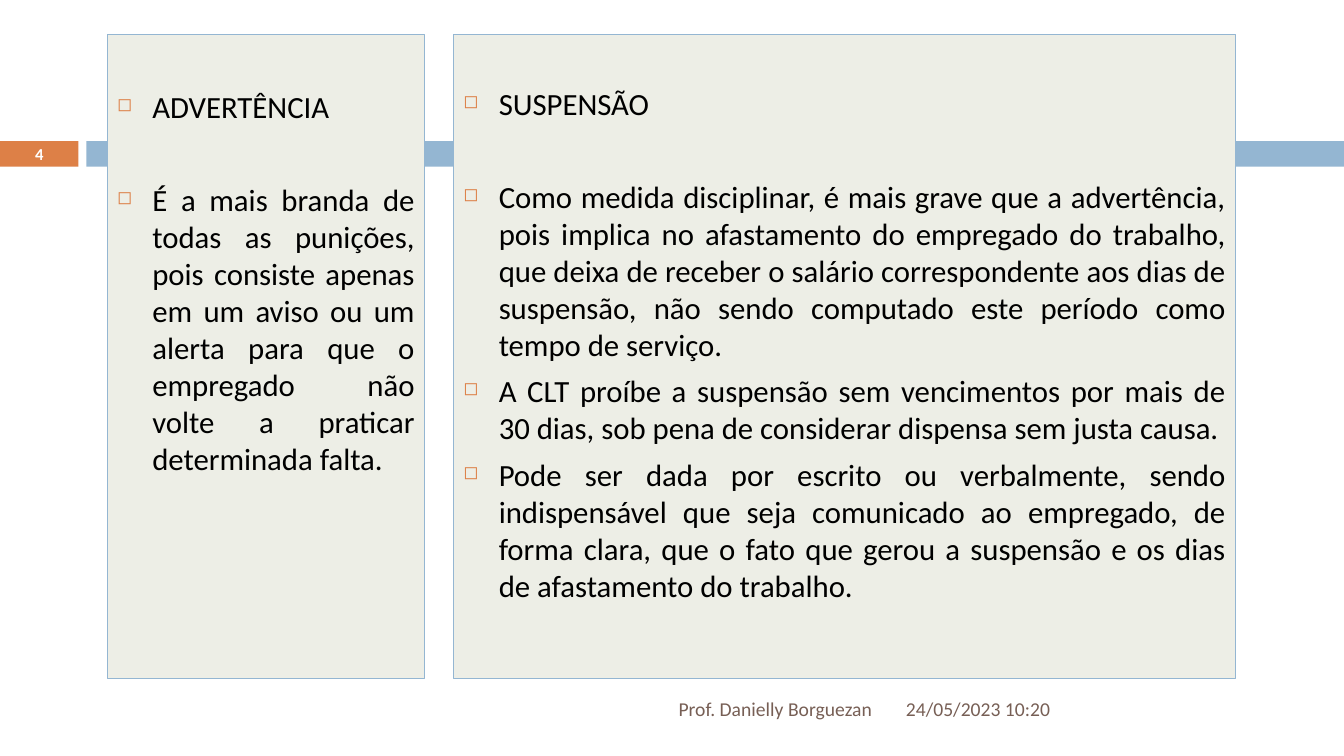
from lxml.etree import SubElement
from pptx import Presentation
from pptx.dml.color import RGBColor
from pptx.enum.shapes import MSO_SHAPE
from pptx.enum.text import MSO_ANCHOR, PP_ALIGN
from pptx.oxml.ns import qn
from pptx.util import Cm, Pt

ORANGE = RGBColor(0xDD, 0x80, 0x47)
BLUE = RGBColor(0x94, 0xB6, 0xD2)
CREAM = RGBColor(0xED, 0xEE, 0xE6)
BROWN = RGBColor(0x77, 0x5F, 0x55)
BLACK = RGBColor(0, 0, 0)
WHITE = RGBColor(0xFF, 0xFF, 0xFF)

WIDTH, HEIGHT = 33.87, 19.05
INSET = 0.25
INDENT = Cm(0.89)

WARNING = [
    "ADVERTÊNCIA",
    "É a mais branda de todas as punições, pois consiste apenas em um aviso ou um "
    "alerta para que o empregado não volte a praticar determinada falta.",
]
SUSPENSION = [
    "SUSPENSÃO",
    "Como medida disciplinar, é mais grave que a advertência, pois implica no "
    "afastamento do empregado do trabalho, que deixa de receber o salário "
    "correspondente aos dias de suspensão, não sendo computado este período como "
    "tempo de serviço.",
    "A CLT proíbe a suspensão sem vencimentos por mais de 30 dias, sob pena de "
    "considerar dispensa sem justa causa.",
    "Pode ser dada por escrito ou verbalmente, sendo indispensável que seja "
    "comunicado ao empregado, de forma clara, que o fato que gerou a suspensão e os "
    "dias de afastamento do trabalho.",
]


def add_text(p, text, size=22, color=BLACK, bold=False, align=PP_ALIGN.LEFT):
    p.alignment = align
    r = p.add_run()
    r.text = text
    r.font.name = "Calibri"
    r.font.size = Pt(size)
    r.font.bold = bold
    r.font.color.rgb = color


def add_rect(s, x, y, w, h, fill, line=None):
    sp = s.shapes.add_shape(MSO_SHAPE.RECTANGLE, Cm(x), Cm(y), Cm(w), Cm(h))
    sp.shadow.inherit = False
    sp.fill.solid()
    sp.fill.fore_color.rgb = fill
    if line is None:
        sp.line.fill.background()
    else:
        sp.line.color.rgb = line
        sp.line.width = Pt(0.75)
    return sp


def add_label(s, x, y, w, h, text, right=INSET, **fmt):
    tf = s.shapes.add_textbox(Cm(x), Cm(y), Cm(w), Cm(h)).text_frame
    tf.word_wrap = True
    tf.vertical_anchor = MSO_ANCHOR.MIDDLE
    tf.margin_left, tf.margin_right = Cm(INSET), Cm(right)
    tf.margin_top = tf.margin_bottom = 0
    add_text(tf.paragraphs[0], text, **fmt)


def add_bullet(p):
    pPr = p._p.get_or_add_pPr()
    pPr.set("marL", str(INDENT))
    pPr.set("indent", str(-INDENT))
    color = SubElement(pPr, qn("a:buClr"))
    SubElement(color, qn("a:srgbClr"), val=str(ORANGE))
    SubElement(pPr, qn("a:buSzPct"), val="60000")
    SubElement(pPr, qn("a:buChar"), char="◻")


def add_band(s, x, y, w, h):
    number_w, gap = 1.98, 0.2
    bar_x = x + number_w + gap
    add_rect(s, x, y, number_w, h, ORANGE)
    add_rect(s, bar_x, y, w - bar_x, h, BLUE)
    add_label(s, x, y, number_w, h, "4", size=11.9, color=WHITE, bold=True,
              align=PP_ALIGN.CENTER)


def add_panel(s, x, y, w, h, items, top):
    tf = add_rect(s, x, y, w, h, CREAM, BLUE).text_frame
    tf.word_wrap = True
    tf.vertical_anchor = MSO_ANCHOR.TOP
    tf.margin_left = tf.margin_right = Cm(INSET)
    tf.margin_top = Cm(top)
    for i, text in enumerate(items):
        p = tf.add_paragraph() if i else tf.paragraphs[0]
        if i:
            p.space_before = Pt(40 if i == 1 else 7)
        add_bullet(p)
        add_text(p, text, align=PP_ALIGN.JUSTIFY)


def add_footer(s, x, y, w, h):
    author_w, gap = 20.09, 0.23
    date_x = x + author_w + gap
    add_label(s, x, y, author_w, h, "Prof. Danielly Borguezan", right=0.37,
              size=14, color=BROWN, align=PP_ALIGN.RIGHT)
    add_label(s, date_x, y, x + w - date_x, h, "24/05/2023 10:20",
              size=14, color=BROWN)


def main():
    prs = Presentation()
    prs.slide_width, prs.slide_height = Cm(WIDTH), Cm(HEIGHT)
    s = prs.slides.add_slide(prs.slide_layouts[6])
    add_band(s, 0, 3.56, WIDTH, 0.64)
    add_panel(s, 2.7, 0.87, 8, 16.23, WARNING, top=1.34)
    add_panel(s, 11.43, 0.87, 19.71, 16.23, SUSPENSION, top=1.26)
    add_footer(s, 2.26, 17.35, 30.2, 1.02)
    prs.save("out.pptx")


if __name__ == "__main__":
    main()
